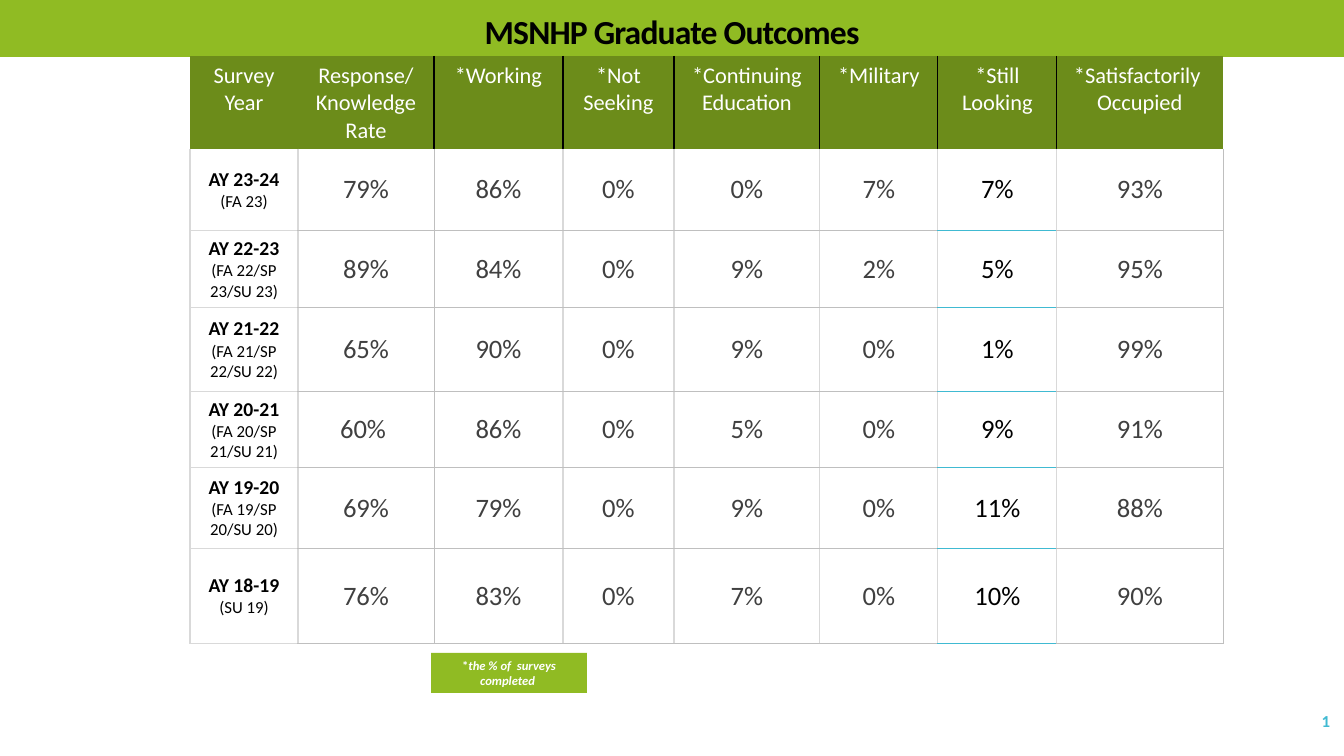
"""Build the MSNHP graduate outcomes slide: title band, table, footnote and page number."""
from lxml import etree
from pptx import Presentation
from pptx import util as u
from pptx.dml.color import RGBColor
from pptx.enum import shapes, text
from pptx.oxml.ns import qn

PX = 914400 / 100.8
HUES = {"band": "90BB23", "head": "6C8C1A", "white": "FFFFFF", "black": "000000",
        "ink": "404040", "aqua": "40BAD2", "pale": "D9D9D9", "gray": "BFBFBF"}
WIDE = [108, 136, 129, 111, 146, 118, 119, 166]
TALL = [76, 82, 77, 84, 76, 81, 95]
HEADS = ["Survey Year", "Response/\nKnowledge\nRate", "*Working", "*Not Seeking",
         "*Continuing Education", "*Military", "*Still Looking",
         "*Satisfactorily \nOccupied"]
ROWS = [
    ["AY 23-24\n(FA 23)", "79%", "86%", "0%", "0%", "7%", "7%", "93%"],
    ["AY 22-23\n(FA 22/SP 23/SU 23)", "89%", "84%", "0%", "9%", "2%", "5%", "95%"],
    ["AY 21-22\n(FA 21/SP 22/SU 22)", "65%", "90%", "0%", "9%", "0%", "1%", "99%"],
    ["AY 20-21\n(FA 20/SP 21/SU 21)", "60% ", "86%", "0%", "5%", "0%", "9%", "91%"],
    ["AY 19-20\n(FA 19/SP 20/SU 20)", "69%", "79%", "0%", "9%", "0%", "11%", "88%"],
    ["AY 18-19\n(SU 19)", "76%", "83%", "0%", "7%", "0%", "10%", "90%"],
]
LAST = len(WIDE) - 1
LOOK = 6


def style(para, size, hue, bold=False, align=text.PP_ALIGN.CENTER):
    para.alignment = align
    for run in para.runs:
        run.font.name = "Calibri"
        run.font.size = u.Pt(size)
        run.font.bold = bold
        run.font.color.rgb = RGBColor.from_string(HUES[hue])


def edge(cell, side, hue, width):
    line = etree.SubElement(cell._tc.get_or_add_tcPr(), qn("a:ln" + side), w=str(u.Pt(width)))
    if hue:
        fill = etree.SubElement(line, qn("a:solidFill"))
        etree.SubElement(fill, qn("a:srgbClr"), val=HUES[hue])
    else:
        etree.SubElement(line, qn("a:noFill"))


deck = Presentation()
deck.slide_width, deck.slide_height = round(1344 * PX), round(756 * PX)
slide = deck.slides.add_slide(deck.slide_layouts[6])

page = slide.shapes.add_textbox(*[round(n * PX) for n in (1172, 701, 168, 40)])
page.text_frame.word_wrap = True
page.text_frame.vertical_anchor = text.MSO_ANCHOR.MIDDLE
page.text_frame.text = "1"
page.text_frame.paragraphs[0].space_after = u.Pt(6)
style(page.text_frame.paragraphs[0], 12, "aqua", True, text.PP_ALIGN.RIGHT)

bands = []
for box, words, size, hue in [
    ((0, 0, 1344, 57), "MSNHP Graduate Outcomes", 24, "black"),
    ((431, 653, 156, 40), "*", 9, "white"),
]:
    band = slide.shapes.add_shape(shapes.MSO_SHAPE.RECTANGLE, *[round(n * PX) for n in box])
    band.shadow.inherit = False
    band.fill.solid()
    band.fill.fore_color.rgb = RGBColor.from_string(HUES["band"])
    band.line.fill.background()
    band.text_frame.word_wrap = True
    band.text_frame.text = words
    bands.append(band)
    style(band.text_frame.paragraphs[0], size, hue, True)

title, note = [band.text_frame for band in bands]
title.vertical_anchor = text.MSO_ANCHOR.BOTTOM
title.paragraphs[0].line_spacing = 0.9
title.paragraphs[0].runs[0].font._element.set("spc", "-60")
note.auto_size = text.MSO_AUTO_SIZE.SHAPE_TO_FIT_TEXT
tail = note.paragraphs[0].add_run()
tail.text = "the % of  surveys completed "
style(note.paragraphs[0], 9, "white", True)
tail.font.italic = True

frame = slide.shapes.add_table(len(TALL), len(WIDE), *[
    round(n * PX) for n in (190, 56, sum(WIDE), sum(TALL))])
grid = frame.table
grid.first_row = grid.horz_banding = False
for col, wide in zip(grid.columns, WIDE):
    col.width = round(wide * PX)
for row, tall in zip(grid.rows, TALL):
    row.height = round(tall * PX)

for r, row in enumerate([HEADS] + ROWS):
    for c, words in enumerate(row):
        cell = grid.cell(r, c)
        cell.margin_left = cell.margin_right = round(12 * PX)
        cell.margin_top = cell.margin_bottom = round(6 * PX)
        cell.text_frame.text = words
        for side, k in (("L", c), ("R", c + 1)):
            if r == 0:
                edge(cell, side, "black" if 2 <= k <= LAST else None, 1)
            elif k in (2, LAST + 1):
                edge(cell, side, "gray", 0.25)
            else:
                edge(cell, side, "pale", 1)
        flat = {0: ("pale", 1), LOOK: ("aqua", 1)}.get(c, ("gray", 0.25))
        for side, k in (("T", r), ("B", r + 1)):
            edge(cell, side, *(flat if k > 1 else (None, 1)))
        cell.fill.solid()
        cell.fill.fore_color.rgb = RGBColor.from_string(HUES["white" if r else "head"])
        if r:
            cell.vertical_anchor = text.MSO_ANCHOR.MIDDLE
        for n, para in enumerate(cell.text_frame.paragraphs):
            if r == 0:
                style(para, 16, "white")
            elif c == 0:
                style(para, 12 if n else 14, "black", n == 0)
            else:
                style(para, 19, "black" if c == LOOK else "ink")

deck.save("out.pptx")
